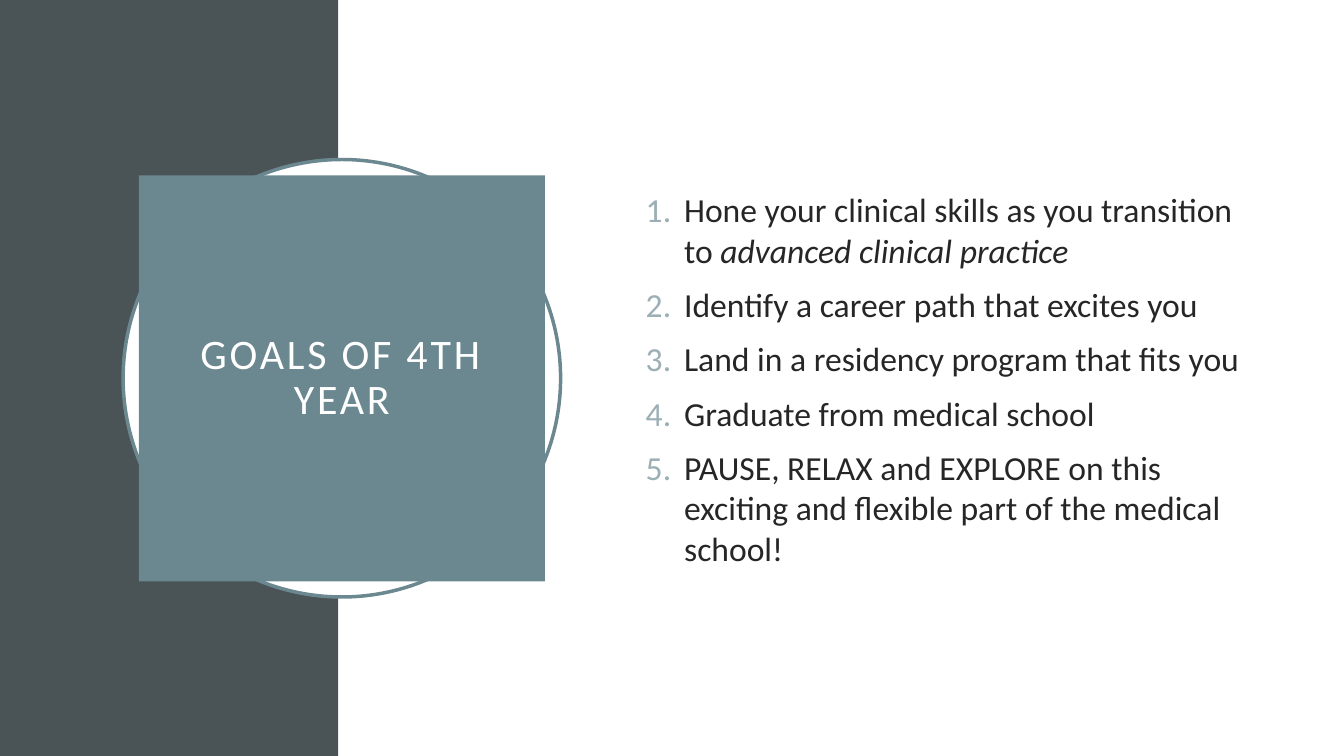
"""Build the slide on the goals of the fourth year."""
from pptx import Presentation
from pptx.dml.color import RGBColor
from pptx.enum.shapes import MSO_SHAPE
from pptx.enum.text import MSO_ANCHOR, MSO_AUTO_SIZE, PP_ALIGN
from pptx.oxml.ns import qn
from pptx.util import Pt
from lxml.etree import SubElement

TITLE = "GOALS OF 4TH YEAR"
GOALS = [
    [("Hone your clinical skills as you transition to ", False),
     ("advanced clinical practice", True)],
    [("Identify a career path that excites you", False)],
    [("Land in a residency program that fits you", False)],
    [("Graduate from medical school", False)],
    [("PAUSE, RELAX and EXPLORE on this exciting and flexible part "
      "of the medical school!", False)],
]

FONT = "Calibri"
SLATE = RGBColor(0x4A, 0x53, 0x56)
TEAL = RGBColor(0x6B, 0x88, 0x91)
MIST = RGBColor(0x9B, 0xAF, 0xB5)
INK = RGBColor(0x26, 0x26, 0x26)
WHITE = RGBColor(0xFF, 0xFF, 0xFF)

WIDE, HIGH = 960, 540
BAND = 241.7
MID_X, MID_Y = 244.2, 270.2
RING, PANEL = 312.5, 290
BODY = (401, 111, 500, 319)
INDENT, HANG = 80.6, 27.4


def center(size):
    """Return the box of a square set about the shared middle."""
    return MID_X - size / 2, MID_Y - size / 2, size, size


def add_form(slide, kind, box, fill, line=None):
    """Add a filled shape with an optional outline."""
    form = slide.shapes.add_shape(kind, *map(Pt, box))
    form.shadow.inherit = False
    form.fill.solid()
    form.fill.fore_color.rgb = fill
    if line is None:
        form.line.fill.background()
    else:
        form.line.color.rgb = line
        form.line.width = Pt(2.5)


def add_text(para, text, size, color, slant=False):
    """Add one styled run and return it."""
    run = para.add_run()
    run.text = text
    font = run.font
    font.name, font.size, font.italic = FONT, Pt(size), slant
    font.color.rgb = color
    return run


def set_title(slide):
    """Place the title as a filled square above the ring."""
    title = slide.shapes.title
    title.left, title.top, title.width, title.height = map(Pt, center(PANEL))
    title.fill.solid()
    title.fill.fore_color.rgb = TEAL
    frame = title.text_frame
    frame.word_wrap = True
    frame.auto_size = MSO_AUTO_SIZE.NONE
    frame.vertical_anchor = MSO_ANCHOR.MIDDLE
    frame.margin_left = frame.margin_right = Pt(14.4)
    frame.margin_top = frame.margin_bottom = Pt(14.4)
    para = frame.paragraphs[0]
    para.alignment = PP_ALIGN.CENTER
    para.line_spacing = 0.9
    run = add_text(para, TITLE, 30, WHITE)
    run.font._element.set("spc", "200")
    slide.shapes._spTree.append(title._element)


def set_number(para):
    """Give a paragraph a hanging, coloured number."""
    props = para._p.get_or_add_pPr()
    props.set("marL", str(Pt(INDENT)))
    props.set("indent", str(-Pt(HANG)))
    tint = SubElement(props, qn("a:buClr"))
    SubElement(tint, qn("a:srgbClr"), val=str(MIST))
    SubElement(props, qn("a:buFont"), typeface="+mj-lt")
    SubElement(props, qn("a:buAutoNum"), type="arabicPeriod")


def add_goals(slide):
    """Add the numbered list of goals."""
    frame = slide.shapes.add_textbox(*map(Pt, BODY)).text_frame
    frame.word_wrap = True
    frame.vertical_anchor = MSO_ANCHOR.MIDDLE
    for rank, goal in enumerate(GOALS):
        para = frame.add_paragraph() if rank else frame.paragraphs[0]
        para.space_before = Pt(10)
        set_number(para)
        for text, slant in goal:
            add_text(para, text, 24, INK, slant)


def main():
    """Build and save the deck."""
    deck = Presentation()
    deck.slide_width, deck.slide_height = Pt(WIDE), Pt(HIGH)
    slide = deck.slides.add_slide(deck.slide_layouts[5])
    rect = MSO_SHAPE.RECTANGLE
    add_form(slide, rect, (0, 0, BAND, HIGH), SLATE)
    add_form(slide, rect, (BAND, 0, WIDE - BAND, HIGH), WHITE)
    add_form(slide, MSO_SHAPE.OVAL, center(RING), WHITE, TEAL)
    set_title(slide)
    add_goals(slide)
    deck.save("out.pptx")


if __name__ == "__main__":
    main()
